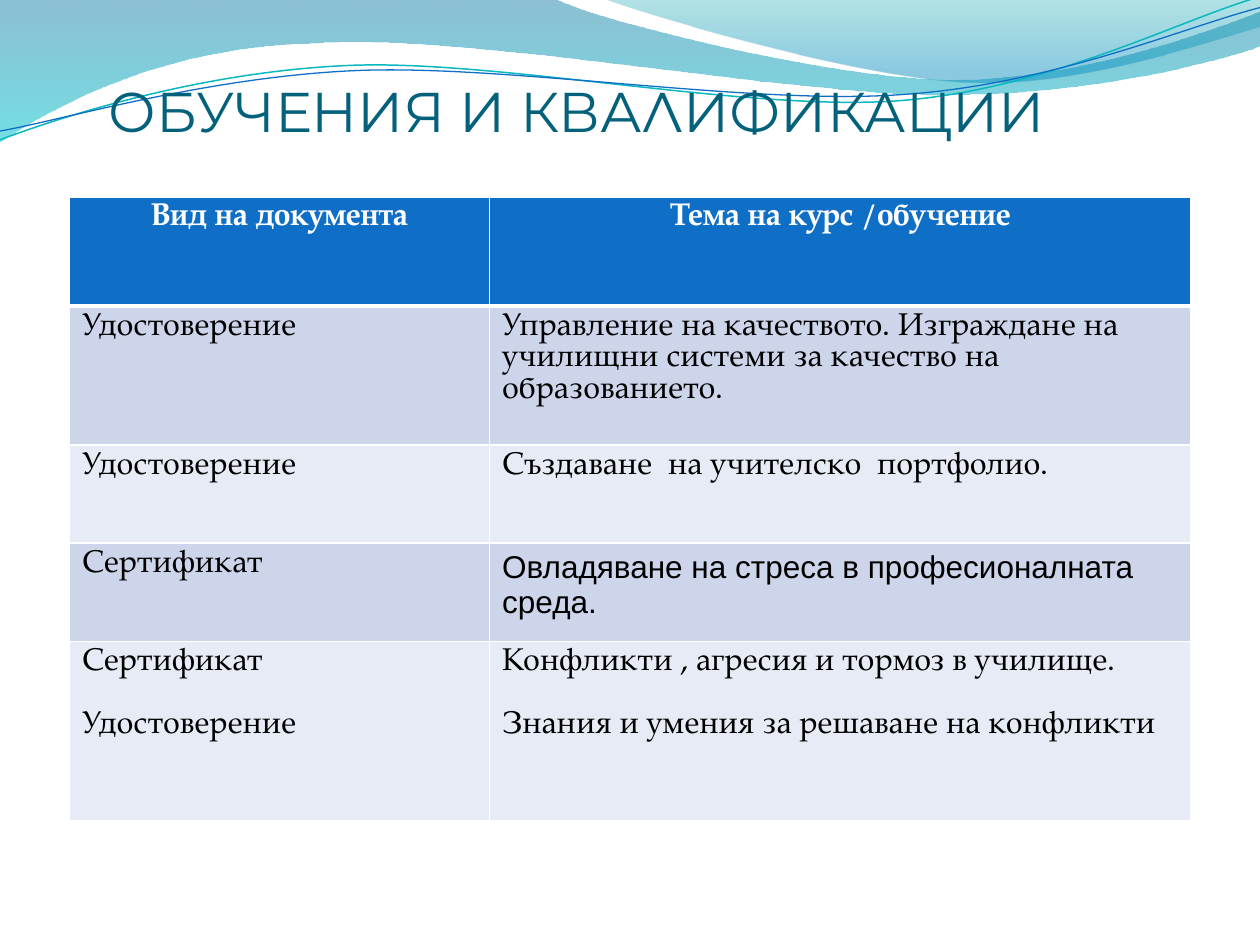
from collections import namedtuple
from math import cos, radians, sin

from lxml.etree import SubElement
from pptx import Presentation
from pptx.dml.color import RGBColor
from pptx.enum.lang import MSO_LANGUAGE_ID as Language
from pptx.enum.text import MSO_ANCHOR as Anchor, MSO_AUTO_SIZE as AutoSize, PP_ALIGN as Align
from pptx.oxml.ns import qn
from pptx.util import Cm, Pt

Box = namedtuple("Box", "left top width height")
# An outline has its box and its segments in tenths of the slide width.
# In a segment two numbers make a straight line, six make a Bézier curve.
Outline = namedtuple("Outline", "box segments angle closed")
SERIF = "TeX Gyre Pagella"

BROAD_WAVE = Outline(Box(-0.01, -0.01, 10.02, 1.14), [
    (0, 0), (4.4, -0.01),
    (4.76, 0.17, 6.64, 0.63, 7.58, 0.63), (8.53, 0.63, 9.58, 0.26, 10, 0.09),
    (10.01, 0.36),
    (9.83, 0.44, 8.7, 0.76, 7.46, 0.75), (6.22, 0.75, 3.82, 0.28, 2.57, 0.34),
    (1.29, 0.36, 0.46, 0.83, -0.01, 1.13), (0, 0),
], 0, True)
RIGHT_WAVE = Outline(Box(4.79, -0.01, 5.21, 0.7), [
    (4.79, -0.01),
    (5.09, 0.11, 6.82, 0.62, 7.69, 0.65), (8.56, 0.69, 9.61, 0.32, 10, 0.21),
    (10, 0), (4.79, -0.01),
], 0, True)
TEAL_LINE = Outline(Box(-0.02, 0.22, 10.02, 0.71), [
    (0, 1.11),
    (0.48, 0.93, 1.58, 0.57, 2.77, 0.52), (3.95, 0.47, 5.93, 0.89, 7.13, 0.8),
    (8.33, 0.71, 9.38, 0.15, 9.98, -0.02),
], -2.7, False)
BLUE_LINE = Outline(Box(-0.02, 0.3, 10.03, 0.58), [
    (0, 1.04),
    (0.47, 0.96, 1.64, 0.61, 2.83, 0.56), (4.03, 0.51, 5.97, 0.84, 7.17, 0.75),
    (8.36, 0.67, 9.41, 0.21, 10, 0.06),
], -2.7, False)

HEADINGS = ["Вид на документа", "Тема на курс /обучение"]
COURSES = [
    ("Удостоверение",
     "Управление на качеството. Изграждане на училищни системи за качество на образованието."),
    ("Удостоверение", "Създаване  на учителско  портфолио."),
    ("Сертификат", "Овладяване на стреса в професионалната среда."),
    ("Сертификат\nУдостоверение",
     "Конфликти , агресия и тормоз в училище.\nЗнания и умения за решаване на конфликти"),
]
COLUMN_WIDTHS = [8.47, 14.14]
ROW_HEIGHTS = [2.2, 2.8, 1.98, 1.98, 3.62]


def color(value):
    return RGBColor.from_string(value)


def format_runs(paragraph, font_name, size, font_color, bold=False):
    for run in paragraph.runs:
        font = run.font
        font.name, font.size, font.bold = font_name, Pt(size), bold
        font.color.rgb = color(font_color)
        font.language_id = Language.BULGARIAN


def add_outline(shapes, area, outline):
    unit = area.width / 10
    box, turn = outline.box, radians(-outline.angle)
    center_x, center_y = box.left + box.width / 2, box.top + box.height / 2

    def local(x, y):
        """Undo the shape's rotation and measure from its own corner."""
        x, y = x - center_x, y - center_y
        return (round((x * cos(turn) - y * sin(turn) + box.width / 2) * unit),
                round((x * sin(turn) + y * cos(turn) + box.height / 2) * unit))

    builder = shapes.build_freeform(0, 0)
    builder.add_line_segments([(round(box.width * unit), round(box.height * unit))],
                              close=False)
    shape = builder.convert_to_shape(area.left + round(box.left * unit),
                                     area.top + round(box.top * unit))
    # Curved segments replace the straight diagonal
    outline_path = next(shape._element.iter(qn("a:path")))
    for command in list(outline_path):
        outline_path.remove(command)
    for index, segment in enumerate(outline.segments):
        tag = "a:cubicBezTo" if len(segment) == 6 else "a:lnTo" if index else "a:moveTo"
        command = SubElement(outline_path, qn(tag))
        for x, y in zip(segment[::2], segment[1::2]):
            point = SubElement(command, qn("a:pt"))
            for name, value in zip("xy", local(x, y)):
                point.set(name, str(value))
    if outline.closed:
        SubElement(outline_path, qn("a:close"))
    shape.rotation = outline.angle
    shape.shadow.inherit = False
    return shape


def add_wave(shapes, area, outline, stops):
    shape = add_outline(shapes, area, outline)
    shape.line.fill.background()
    shape.fill.gradient()
    shape.fill.gradient_angle = 270
    for stop, (position, value, _) in zip(shape.fill.gradient_stops, stops):
        stop.position = position
        stop.color.rgb = color(value)
    for element, (_, _, opacity) in zip(shape._element.spPr.iter(qn("a:srgbClr")), stops):
        SubElement(element, qn("a:alpha")).set("val", str(opacity * 1000))


def add_wave_line(shapes, area, outline, value, width):
    shape = add_outline(shapes, area, outline)
    shape.fill.background()
    shape.line.color.rgb = color(value)
    shape.line.width = Pt(width)


def add_header_waves(slide, area):
    add_wave(slide.shapes, area, BROAD_WAVE, [(0, "0074A1", 45), (1, "00C6CF", 55)])
    add_wave(slide.shapes, area, RIGHT_WAVE, [(0, "00A1A9", 30), (0.8, "008BBF", 45)])
    lines = slide.shapes.add_group_shape().shapes
    add_wave_line(lines, area, TEAL_LINE, "0AB8BF", 0.85)
    add_wave_line(lines, area, BLUE_LINE, "0F6FC6", 0.75)


def set_borders(cell, widths):
    properties = cell._tc.get_or_add_tcPr()
    for index, (side, width) in enumerate(widths.items()):
        line = properties.makeelement(qn(f"a:ln{side}"), {"w": str(Pt(width))})
        fill = SubElement(line, qn("a:solidFill"))
        SubElement(fill, qn("a:srgbClr")).set("val", "FFFFFF")
        properties.insert(index, line)


def fill_cell(cell, text, fill, font_name, font_color, heading=False):
    cell.fill.solid()
    cell.fill.fore_color.rgb = color(fill)
    cell.text_frame.text = text
    for index, paragraph in enumerate(cell.text_frame.paragraphs):
        paragraph.alignment = Align.CENTER if heading else Align.LEFT
        paragraph.space_before = Pt(18 if index else 0)
        format_runs(paragraph, font_name, 18, font_color, heading)


def add_course_table(slide, box):
    table = slide.shapes.add_table(len(COURSES) + 1, len(HEADINGS), *box).table
    for column, width in zip(table.columns, COLUMN_WIDTHS):
        column.width = Cm(width)
    for row, height in zip(table.rows, ROW_HEIGHTS):
        row.height = Cm(height)
    for column, heading in enumerate(HEADINGS):
        fill_cell(table.cell(0, column), heading, "0F6FC6", SERIF, "FFFFFF", True)
    for row, course in enumerate(COURSES, start=1):
        fill = "CCD5EA" if row % 2 else "E7EBF5"
        for column, text in enumerate(course):
            font_name = "Arial" if (row, column) == (3, 1) else SERIF
            fill_cell(table.cell(row, column), text, fill, font_name, "000000")
    for row in range(len(ROW_HEIGHTS)):
        for column in range(len(HEADINGS)):
            set_borders(table.cell(row, column), {
                "L": 1, "R": 1, "T": 3 if row == 1 else 1, "B": 1 if row else 3})


def place_title(slide, box):
    title = slide.shapes.title
    title.left, title.top, title.width, title.height = box
    frame = title.text_frame
    frame.text = " ОБУЧЕНИЯ И КВАЛИФИКАЦИИ"
    frame.auto_size = AutoSize.NONE
    frame.vertical_anchor = Anchor.BOTTOM
    frame.margin_top = Cm(0.13)
    frame.margin_left = frame.margin_right = frame.margin_bottom = 0
    paragraph = frame.paragraphs[0]
    paragraph.alignment = Align.LEFT
    format_runs(paragraph, "Montserrat", 32, "04617B")
    # The title lies in front of the waves
    slide.shapes._spTree.append(title._element)


def main():
    presentation = Presentation()
    presentation.slide_width, presentation.slide_height = Cm(25.4), Cm(19.05)
    slide = presentation.slides.add_slide(presentation.slide_layouts[5])
    add_header_waves(slide, Box(0, 0, Cm(25.4), Cm(2.87)))
    add_course_table(slide, Box(Cm(1.4), Cm(3.97), Cm(22.61), Cm(12.58)))
    place_title(slide, Box(Cm(1.9), Cm(1.12), Cm(22.63), Cm(1.78)))
    presentation.save("out.pptx")


if __name__ == "__main__":
    main()
